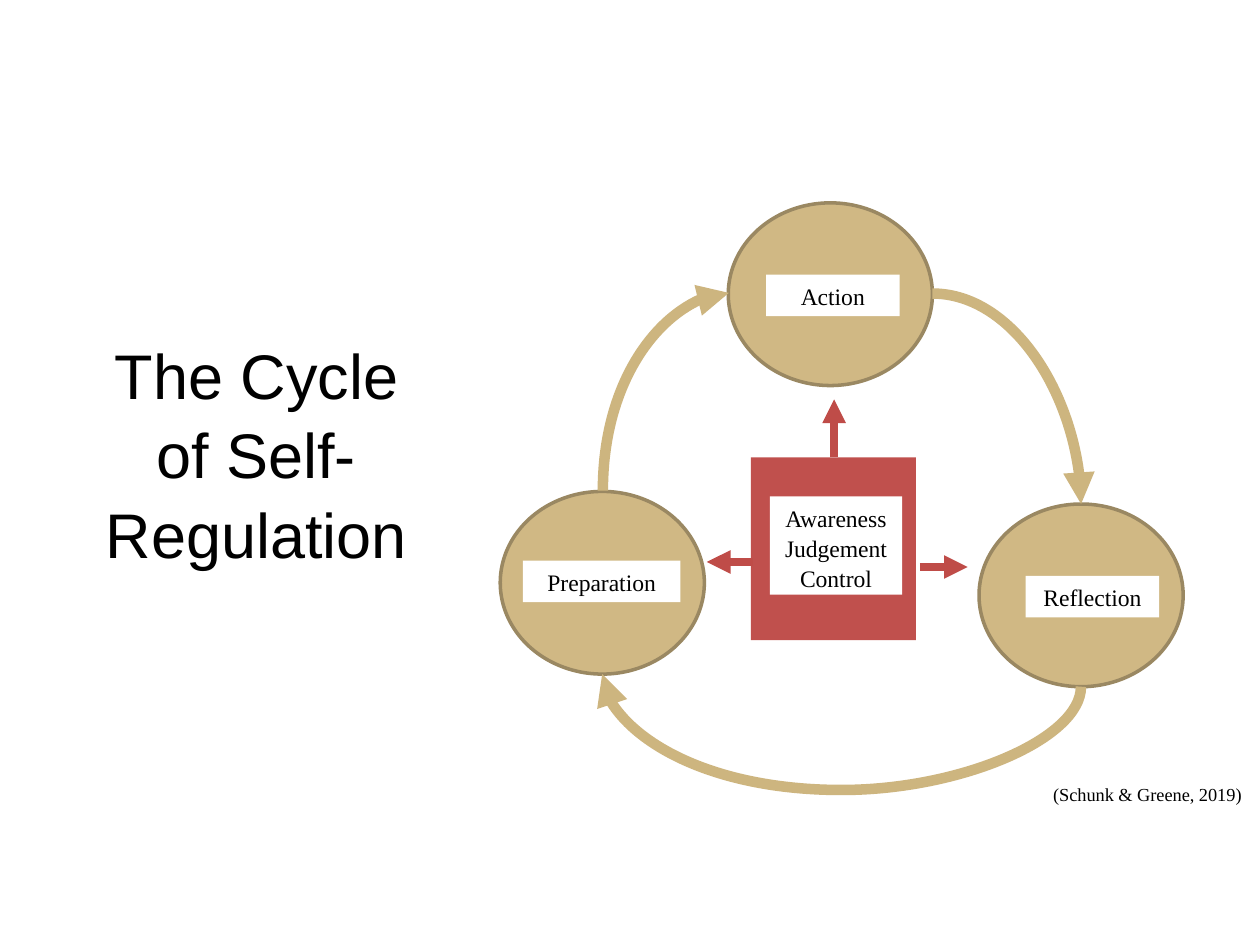
from dataclasses import dataclass

import lxml.etree
import pptx
import pptx.dml.color
import pptx.enum.shapes
import pptx.enum.text
import pptx.oxml.ns
import pptx.util

Inches = pptx.util.Inches
Pt = pptx.util.Pt
qn = pptx.oxml.ns.qn
SHAPE = pptx.enum.shapes.MSO_SHAPE
CONNECTOR = pptx.enum.shapes.MSO_CONNECTOR
ALIGN = pptx.enum.text.PP_ALIGN
ANCHOR = pptx.enum.text.MSO_ANCHOR


@dataclass(frozen=True)
class Theme:
    stage: str = "D0B884"
    stage_edge: str = "9A8862"
    cycle: str = "CDB57F"
    core: str = "C0504D"
    core_arrow: str = "BF4C48"
    label: str = "FFFFFF"
    text: str = "000000"
    title_font: str = "Arial"
    body_font: str = "Times New Roman"
    title_size: float = 36
    label_size: float = 13.5
    citation_size: float = 10.5
    line_spacing: float = 1.05


@dataclass(frozen=True)
class Box:
    x: float
    y: float
    w: float
    h: float

    def emu(self) -> tuple:
        return tuple(Inches(v) for v in (self.x, self.y, self.w, self.h))


@dataclass(frozen=True)
class Stage:
    x: float
    y: float
    name: str
    label: Box


@dataclass(frozen=True)
class Curve:
    """A curved connector: its box before rotation, then how it is turned."""
    box: Box
    preset: str
    turn: dict
    bend: int | None = None


THEME = Theme()
STAGE_W, STAGE_H = 1.62, 1.45

STAGES = [
    Stage(5.78, 1.61, "Action", Box(6.08, 2.18, 1.06, 0.33)),
    Stage(7.77, 4.0, "Reflection", Box(8.14, 4.57, 1.06, 0.33)),
    Stage(3.97, 3.9, "Preparation", Box(4.15, 4.45, 1.25, 0.33)),
]
QUARTER_TURN = "5400000"
CURVES = [
    Curve(Box(7.4, 2.33, 1.18, 1.67), "curvedConnector2", {}),
    Curve(Box(6.63, 3.5, 0.1, 3.8), "curvedConnector3",
          {"rot": QUARTER_TURN, "flipH": "1"}, bend=-820000),
    Curve(Box(4.5, 2.61, 1.57, 1.0), "curvedConnector2",
          {"rot": QUARTER_TURN, "flipH": "1", "flipV": "1"}),
]
CORE = Box(5.96, 3.63, 1.31, 1.45)
CORE_LABEL = Box(6.11, 3.94, 1.05, 0.78)
CORE_ARROWS = [
    (6.62, 3.63, 6.62, 3.17),
    (7.3, 4.5, 7.68, 4.5),
    (5.98, 4.46, 5.61, 4.46),
]


def rgb(color: str) -> pptx.dml.color.RGBColor:
    return pptx.dml.color.RGBColor.from_string(color)


def write(s, lines: list[str], font: str, size: float, align=ALIGN.CENTER,
          anchor=ANCHOR.TOP) -> None:
    tf = s.text_frame
    tf.word_wrap = True
    tf.vertical_anchor = anchor
    for i, line in enumerate(lines):
        p = tf.paragraphs[0] if i == 0 else tf.add_paragraph()
        p.alignment = align
        p.line_spacing = THEME.line_spacing
        r = p.add_run()
        r.text = line
        for name, value in {"name": font, "size": Pt(size)}.items():
            setattr(r.font, name, value)
        r.font.color.rgb = rgb(THEME.text)


def add_solid(sp, kind, box: Box, fill: str, edge: str | None = None):
    s = sp.add_shape(kind, *box.emu())
    s.shadow.inherit = False
    s.fill.solid()
    s.fill.fore_color.rgb = rgb(fill)
    if edge:
        s.line.color.rgb = rgb(edge)
        s.line.width = Pt(2)
    else:
        s.line.fill.background()
    return s


def add_label(sp, box: Box, lines: list[str]) -> None:
    s = add_solid(sp, SHAPE.RECTANGLE, box, THEME.label)
    write(s, lines, THEME.body_font, THEME.label_size)


def add_arrow(sp, kind, ends: tuple, color: str, width: float):
    c = sp.add_connector(kind, *(Inches(v) for v in ends))
    c.line.color.rgb = rgb(color)
    c.line.width = Pt(width)
    lxml.etree.SubElement(c.line._get_or_add_ln(), qn("a:tailEnd"), type="triangle")
    lxml.etree.SubElement(c._element.spPr, qn("a:effectLst"))
    return c


def add_curve(sp, curve: Curve) -> None:
    b = curve.box
    c = add_arrow(sp, CONNECTOR.CURVE, (b.x, b.y, b.x + b.w, b.y + b.h),
                  THEME.cycle, 6)
    spPr = c._element.spPr
    for name, value in curve.turn.items():
        spPr.find(qn("a:xfrm")).set(name, value)
    geom = spPr.find(qn("a:prstGeom"))
    geom.set("prst", curve.preset)
    if curve.bend is not None:
        guides = geom.find(qn("a:avLst"))
        if guides is None:
            guides = lxml.etree.SubElement(geom, qn("a:avLst"))
        lxml.etree.SubElement(guides, qn("a:gd"), name="adj1",
                              fmla=f"val {curve.bend}")


def add_title(sp) -> None:
    s = sp.add_textbox(*Box(0.61, 1.55, 2.85, 4.07).emu())
    margins = {"margin_left": 0.07, "margin_top": 0.04,
               "margin_right": 0.07, "margin_bottom": 0.04}
    for name, value in margins.items():
        setattr(s.text_frame, name, Inches(value))
    write(s, ["The Cycle of Self-Regulation"], THEME.title_font,
          THEME.title_size, anchor=ANCHOR.MIDDLE)


def main() -> None:
    prs = pptx.Presentation()
    prs.slide_width, prs.slide_height = Inches(10), Inches(7.5)
    sp = prs.slides.add_slide(prs.slide_layouts[6]).shapes

    add_title(sp)
    for stage in STAGES:
        add_solid(sp, SHAPE.OVAL, Box(stage.x, stage.y, STAGE_W, STAGE_H),
                  THEME.stage, THEME.stage_edge)
    for curve in CURVES:
        add_curve(sp, curve)
    for stage in STAGES:
        add_label(sp, stage.label, [stage.name])

    add_solid(sp, SHAPE.RECTANGLE, CORE, THEME.core)
    add_label(sp, CORE_LABEL, ["Awareness", "Judgement", "Control"])
    for ends in CORE_ARROWS:
        add_arrow(sp, CONNECTOR.STRAIGHT, ends, THEME.core_arrow, 4.5)

    citation = sp.add_textbox(*Box(8.26, 6.16, 1.74, 0.28).emu())
    write(citation, ["(Schunk & Greene, 2019)"], THEME.body_font,
          THEME.citation_size, align=ALIGN.LEFT)
    prs.save("out.pptx")


if __name__ == "__main__":
    main()
